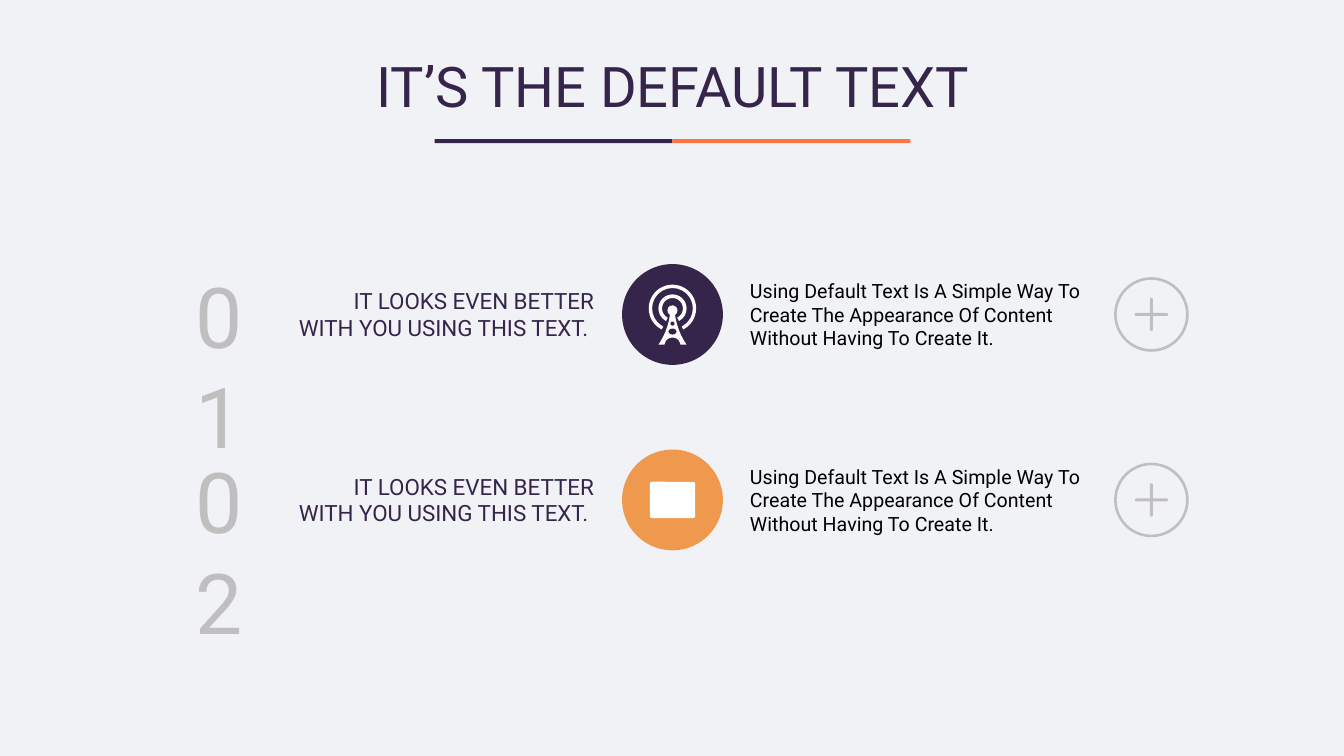
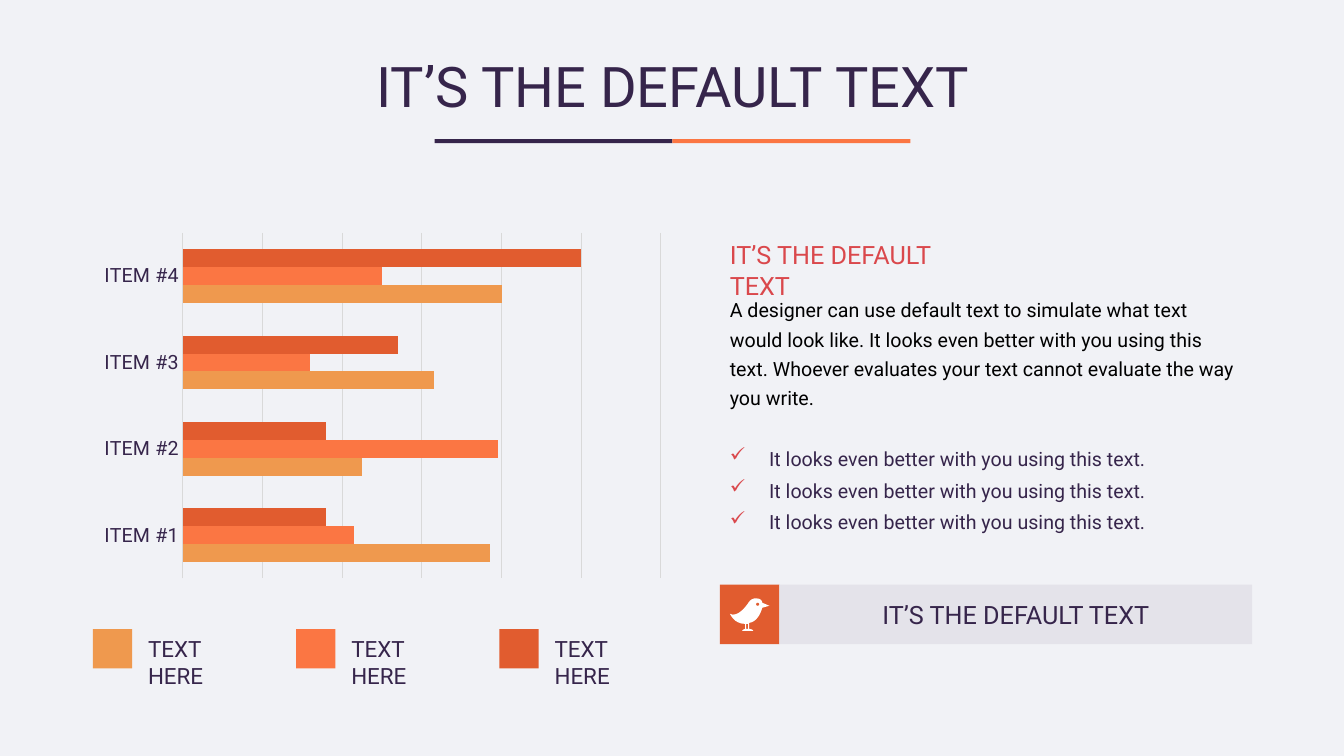
from dataclasses import dataclass

from pptx import Presentation
from pptx.chart import data as chart_data
from pptx.dml import color
from pptx.enum import chart as chart_kinds, shapes, text
from pptx import oxml
from pptx.oxml import ns
from pptx import util as u


@dataclass(frozen=True)
class Theme:
    font: str = "Roboto"
    paper: str = "F1F2F6"
    ink: str = "36254B"
    coral: str = "FB7643"
    amber: str = "EF994E"
    rust: str = "E15C2F"
    red: str = "DA484C"
    silver: str = "BFBFBF"
    grid: str = "D9D9D9"
    mist: str = "E4E3EA"
    black: str = "000000"
    white: str = "FFFFFF"
    title: int = 40
    number: int = 60
    heading: int = 18
    label: int = 16
    body: int = 14


@dataclass(frozen=True)
class Box:
    left: float
    top: float
    width: float
    height: float

    def inset(self, left, top, width, height):
        return Box(self.left + left, self.top + top, width, height)

    def centred(self, width, height, down=0):
        return self.inset((self.width - width) / 2, (self.height - height) / 2 + down, width, height)

    def lengths(self):
        return [u.Inches(n) for n in (self.left, self.top, self.width, self.height)]


THEME = Theme()
SHAPE = shapes.MSO_SHAPE
ALIGN = text.PP_ALIGN
HEADLINE = "IT’S THE DEFAULT TEXT"
LABEL = "IT LOOKS EVEN BETTER WITH YOU USING THIS TEXT. "
DETAIL = ("Using Default Text Is A Simple Way To Create The Appearance Of Content "
          "Without Having To Create It.")
STORY = ("A designer can use default text to simulate what text would look like. "
         "It looks even better with you using this text. "
         "Whoever evaluates your text cannot evaluate the way you write.")
POINT = "It looks even better with you using this text."
CATEGORIES = ["ITEM #1", "ITEM #2", "ITEM #3", "ITEM #4"]
SERIES = [
    ("Series 1", (77, 45, 63, 80), THEME.amber),
    ("Series 2", (43, 79, 32, 50), THEME.coral),
    ("Series 3", (36, 36, 54, 100), THEME.rust),
]
TOWER = [
    [(-2.5, 0), (-4, 12, -9, 23, -14, 30), (-8, 30), (-7, 26, -5, 23, 0, 23),
     (5, 23, 7, 26, 8, 30), (14, 30), (9, 23, 4, 12, 2.5, 0)],
]
BIRD = [
    [(42, 18), (42, 16, 40, 14, 38, 14), (35, 13, 31, 14, 29, 17),
     (23, 26, 16, 32, 10, 29), (10, 29, 14, 39, 25, 39), (25, 44),
     (24, 44, 23, 45, 22, 45.5), (23, 46), (33, 46), (33, 45, 31, 44, 29, 44),
     (29, 38), (36, 37, 40, 30, 42, 23), (49, 21)],
    [(26, 44), (26, 39), (28, 39), (28, 44)],
]


def rgb(value):
    return color.RGBColor.from_string(value)


def paint(shape, fill):
    shape.shadow.inherit = False
    shape.fill.solid()
    shape.fill.fore_color.rgb = rgb(fill)
    shape.line.fill.background()
    return shape


def add_block(page, kind, box, fill, adjustments=()):
    shape = paint(page.shapes.add_shape(kind, *box.lengths()), fill)
    for index, value in enumerate(adjustments):
        shape.adjustments[index] = value
    return shape


def style_font(font, size, tint):
    font.name = THEME.font
    font.size = u.Pt(size)
    font.color.rgb = rgb(tint)


def write(shape, lines, size, tint, align=ALIGN.LEFT, anchor=text.MSO_ANCHOR.TOP, spacing=None):
    frame = shape.text_frame
    frame.word_wrap = True
    frame.vertical_anchor = anchor
    for index, line in enumerate(lines):
        para = frame.paragraphs[0] if index == 0 else frame.add_paragraph()
        para.alignment = align
        if spacing:
            para.line_spacing = spacing
        span = para.add_run()
        span.text = line
        style_font(span.font, size, tint)
    return frame


def add_text(page, box, lines, size, tint, **options):
    return write(page.shapes.add_textbox(*box.lengths()), lines, size, tint, **options)


def add_check(para):
    para.space_before = u.Pt(6)
    props = para._p.get_or_add_pPr()
    indent = u.Inches(0.39)
    props.set("marL", str(indent))
    props.set("indent", str(-indent))
    for tag in (f'<a:buClr {ns.nsdecls("a")}><a:srgbClr val="{THEME.red}"/></a:buClr>',
                f'<a:buChar {ns.nsdecls("a")} char="✓"/>'):
        props.append(oxml.parse_xml(tag))


def trace(contour, steps=8):
    points = [contour[0]]
    for step in contour[1:]:
        if len(step) == 2:
            points.append(step)
            continue
        start = points[-1]
        corners = [start, step[0:2], step[2:4], step[4:6]]
        for index in range(1, steps + 1):
            t = index / steps
            weights = ((1 - t) ** 3, 3 * t * (1 - t) ** 2, 3 * t * t * (1 - t), t ** 3)
            points.append(tuple(sum(w * c[axis] for w, c in zip(weights, corners))
                                for axis in (0, 1)))
    return points


def add_outline(page, left, top, contours, fill):
    fine = 100
    builder = None
    for contour in contours:
        points = [(x * fine, y * fine) for x, y in trace(contour)]
        if builder is None:
            builder = page.shapes.build_freeform(*points[0], scale=u.Inches(0.01) / fine)
        else:
            builder.move_to(*points[0])
        builder.add_line_segments(points[1:], close=True)
    return paint(builder.convert_to_shape(u.Inches(left), u.Inches(top)), fill)


def add_header(page, box):
    add_text(page, box, [HEADLINE], THEME.title, THEME.ink, align=ALIGN.CENTER,
             anchor=text.MSO_ANCHOR.MIDDLE, spacing=0.9)
    width = 2.36
    middle = box.width / 2
    for left, fill in ((middle - width, THEME.ink), (middle, THEME.coral)):
        add_block(page, SHAPE.RECTANGLE, box.inset(left, box.height, width, 0.04), fill)


def add_mast(page, disc):
    for size, down, thickness in ((0.47, -0.06, 0.07), (0.28, -0.06, 0.13)):
        add_block(page, SHAPE.BLOCK_ARC, disc.centred(size, size, down), THEME.white,
                  (70.2, 37.8, thickness))
    add_block(page, SHAPE.OVAL, disc.centred(0.1, 0.1, -0.04), THEME.white)
    add_outline(page, disc.left + disc.width / 2, disc.top + disc.height / 2, TOWER, THEME.white)
    for width, height, down in ((0.04, 0.04, 0.09), (0.08, 0.06, 0.17)):
        add_block(page, SHAPE.OVAL, disc.centred(width, height, down), THEME.ink)


def add_letter(page, disc):
    add_block(page, SHAPE.ROUNDED_RECTANGLE, disc.centred(0.45, 0.36), THEME.white, (0.06,))


def add_plus(page, box):
    add_block(page, SHAPE.DONUT, box, THEME.silver, (0.035,))
    for width, height in ((0.33, 0.03), (0.03, 0.33)):
        add_block(page, SHAPE.ROUNDED_RECTANGLE, box.centred(width, height), THEME.silver, (0.5,))


def add_feature(page, box, number, fill, add_icon):
    add_text(page, box.inset(0, 0, 1, 1.11), [number], THEME.number, THEME.silver,
             align=ALIGN.CENTER)
    add_text(page, box.inset(1.18, 0.23, 3.14, 0.64), [LABEL], THEME.label, THEME.ink,
             align=ALIGN.RIGHT)
    disc = box.inset(4.5, 0.05, 1, 1)
    add_block(page, SHAPE.OVAL, disc, fill)
    add_icon(page, disc)
    add_text(page, box.inset(5.67, 0.15, 3.53, 0.81), [DETAIL], THEME.body, THEME.black)
    add_plus(page, box.inset(9.38, 0.18, 0.74, 0.74))


def add_bars(page, box):
    source = chart_data.CategoryChartData()
    source.categories = CATEGORIES
    for name, values, _ in SERIES:
        source.add_series(name, values)
    kind = chart_kinds.XL_CHART_TYPE.BAR_CLUSTERED
    chart = page.shapes.add_chart(kind, *box.lengths(), source).chart
    chart.has_legend = False
    chart.has_title = False
    style_font(chart.font, 10, THEME.black)
    plot = chart.plots[0]
    plot.gap_width = 182
    plot.overlap = 0
    plot.vary_by_categories = False
    for series, (_, _, fill) in zip(plot.series, SERIES):
        series.format.fill.solid()
        series.format.fill.fore_color.rgb = rgb(fill)
    items = chart.category_axis
    items.major_tick_mark = chart_kinds.XL_TICK_MARK.NONE
    items.minor_tick_mark = chart_kinds.XL_TICK_MARK.NONE
    style_font(items.tick_labels.font, THEME.body, THEME.ink)
    scale = chart.value_axis
    scale.minimum_scale, scale.maximum_scale, scale.major_unit = 0, 120, 20
    scale.visible = False
    scale.has_major_gridlines = True
    for line in (items.format.line, scale.major_gridlines.format.line):
        line.color.rgb = rgb(THEME.grid)
        line.width = u.Pt(0.75)


def add_legend(page, box):
    pitch = box.width / len(SERIES)
    for index, (_, _, fill) in enumerate(SERIES):
        left = index * pitch
        add_block(page, SHAPE.RECTANGLE, box.inset(left, 0, 0.39, 0.39), fill)
        add_text(page, box.inset(left + 0.45, 0.01, 1.2, 0.37), ["TEXT HERE"],
                 THEME.label, THEME.ink)


def add_story(page, box):
    add_text(page, box.inset(0, 0, 2.77, 0.4), [HEADLINE], THEME.heading, THEME.red)
    add_text(page, box.inset(0, 0.52, box.width, 1.28), [STORY], THEME.body, THEME.black,
             spacing=1.25)
    points = add_text(page, box.inset(0, 2.05, 4.53, 0.98), [POINT] * 3, THEME.body, THEME.ink)
    for para in points.paragraphs:
        add_check(para)


def add_banner(page, box):
    side = box.height
    add_block(page, SHAPE.RECTANGLE, box.inset(0, 0, side, side), THEME.rust)
    band = add_block(page, SHAPE.RECTANGLE, box.inset(side, 0, box.width - side, side), THEME.mist)
    write(band, [HEADLINE], THEME.heading, THEME.ink, align=ALIGN.CENTER,
          anchor=text.MSO_ANCHOR.MIDDLE)
    add_outline(page, box.left, box.top, BIRD, THEME.white)
    add_block(page, SHAPE.OVAL, box.inset(0.36, 0.18, 0.03, 0.03), THEME.rust)


def add_page(deck):
    page = deck.slides.add_slide(deck.slide_layouts[6])
    add_header(page, Box(0.92, 0.4, 11.5, 0.98))
    return page


def build_features(deck):
    page = add_page(deck)
    features = (("01", THEME.ink, add_mast), ("02", THEME.amber, add_letter))
    for index, feature in enumerate(features):
        add_feature(page, Box(1.67, 2.57 + 1.84 * index, 10.12, 1.11), *feature)


def build_comparison(deck):
    page = add_page(deck)
    add_bars(page, Box(0.92, 2.24, 5.75, 3.57))
    add_legend(page, Box(0.92, 6.24, 6.05, 0.39))
    add_story(page, Box(7.14, 2.33, 5.28, 3.03))
    add_banner(page, Box(7.14, 5.8, 5.28, 0.59))


def main():
    deck = Presentation()
    deck.slide_width = u.Inches(13.33)
    deck.slide_height = u.Inches(7.5)
    backdrop = deck.slide_master.background.fill
    backdrop.solid()
    backdrop.fore_color.rgb = rgb(THEME.paper)
    build_features(deck)
    build_comparison(deck)
    deck.save("out.pptx")


if __name__ == "__main__":
    main()
